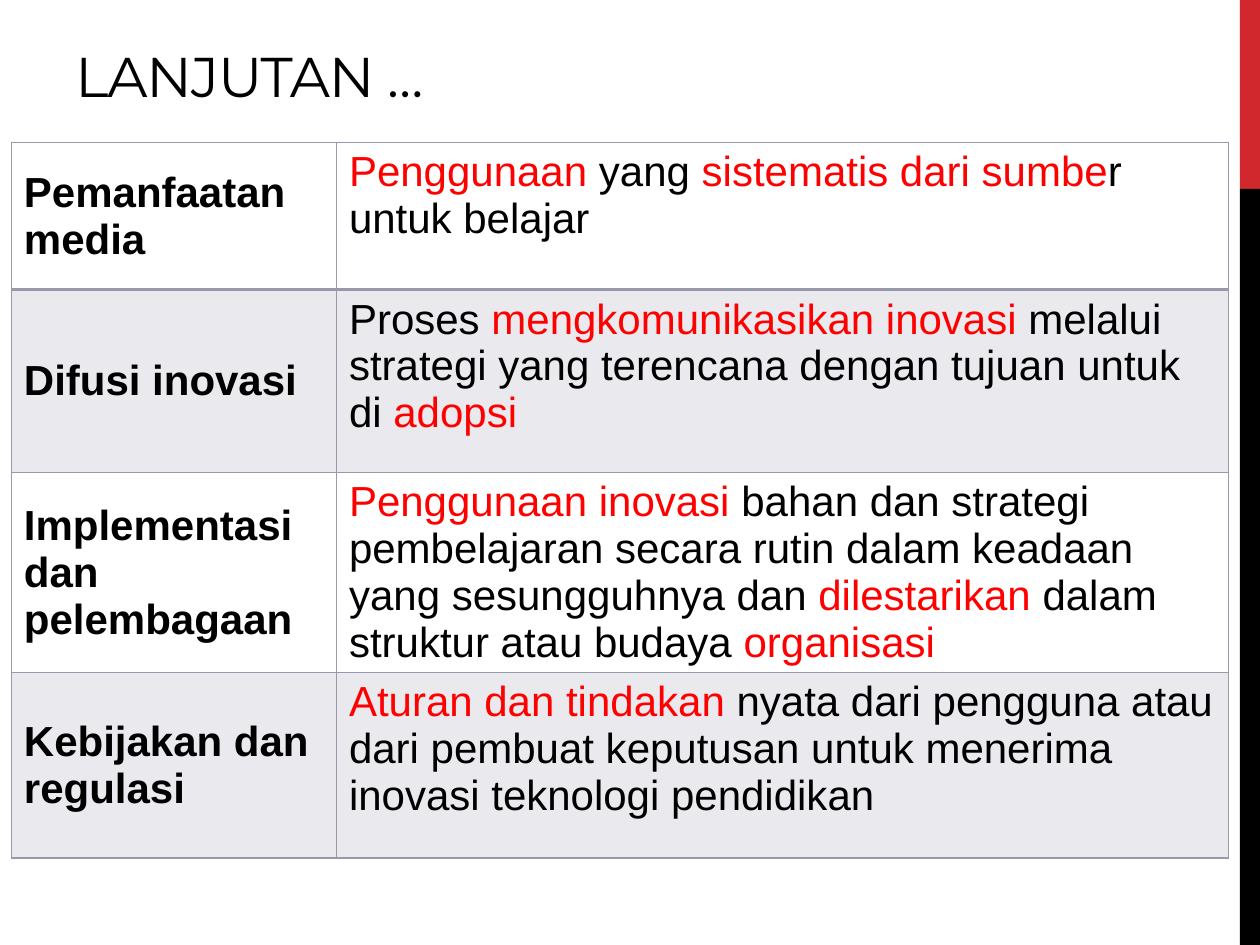
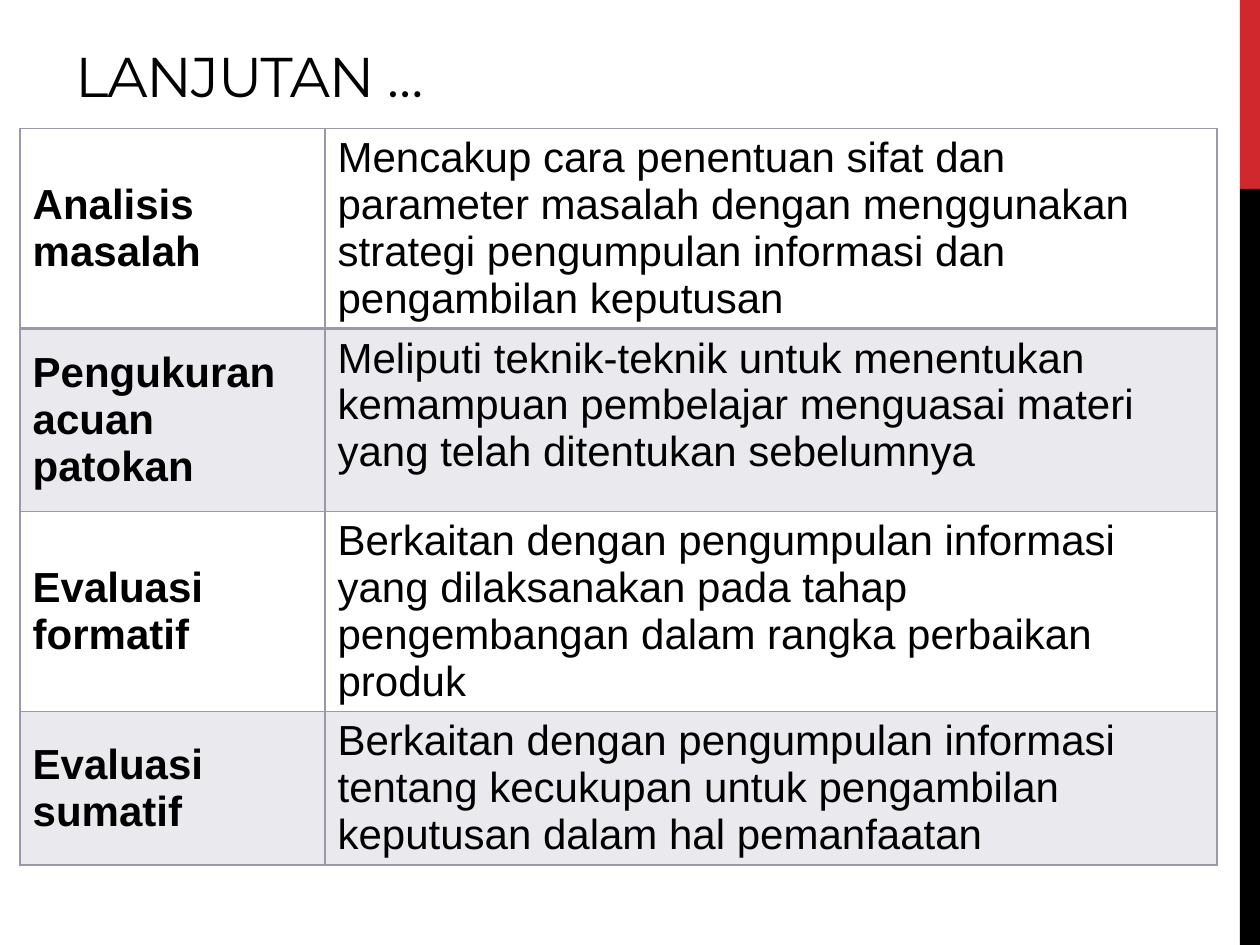
import pptx
import pptx.dml.color
import pptx.enum.shapes
import pptx.enum.text
import pptx.oxml.ns
import pptx.util
from lxml import etree
from pptx.util import Inches

BLACK, RED, ACCENT, GREY = "000000", "FF0000", "D1282E", "989AAC"
TITLE_FONT, BODY_FONT = "Montserrat", "Arial"
BODY_SIZE, BODY_LINE = 24, 26.8
BAND_OPACITY = 20

MEDIA_ROWS = [
    ("Pemanfaatan media", "*Penggunaan* yang *sistematis dari sumbe*r untuk belajar"),
    ("Difusi inovasi",
     "Proses *mengkomunikasikan inovasi *melalui strategi yang terencana "
     "dengan tujuan untuk di *adopsi*"),
    ("Implementasi dan pelembagaan",
     "*Penggunaan inovasi *bahan dan strategi pembelajaran secara rutin dalam keadaan "
     "yang sesungguhnya dan *dilestarikan *dalam struktur atau budaya *organisasi*"),
    ("Kebijakan dan regulasi",
     "*Aturan dan tindakan *nyata dari pengguna atau dari pembuat keputusan "
     "untuk menerima inovasi teknologi pendidikan"),
]
EVALUATION_ROWS = [
    ("Analisis masalah",
     "Mencakup cara penentuan sifat dan parameter masalah dengan menggunakan "
     "strategi pengumpulan informasi dan pengambilan keputusan"),
    ("Pengukuran acuan patokan",
     "Meliputi teknik-teknik untuk menentukan kemampuan pembelajar menguasai materi "
     "yang telah ditentukan sebelumnya"),
    ("Evaluasi formatif",
     "Berkaitan dengan pengumpulan informasi yang dilaksanakan pada tahap "
     "pengembangan dalam rangka perbaikan produk"),
    ("Evaluasi sumatif",
     "Berkaitan dengan pengumpulan informasi tentang kecukupan untuk pengambilan "
     "keputusan dalam hal pemanfaatan"),
]


def color(value):
    return pptx.dml.color.RGBColor.from_string(value)


def add_element(parent, tag, **attributes):
    return etree.SubElement(parent, pptx.oxml.ns.qn(tag), **attributes)


class SlideBuilder:
    def __init__(self, deck):
        self.deck = deck
        self.page = None

    def new_page(self, title):
        self.page = self.deck.slides.add_slide(self.deck.slide_layouts[6])
        self.band(0, 1.5, ACCENT)
        self.band(1.5, 6, BLACK)
        self.title(title)

    def band(self, top, height, fill):
        band = self.page.shapes.add_shape(
            pptx.enum.shapes.MSO_SHAPE.RECTANGLE,
            Inches(9.84), Inches(top), Inches(0.16), Inches(height))
        band.shadow.inherit = False
        band.fill.solid()
        band.fill.fore_color.rgb = color(fill)
        band.line.fill.background()

    def title(self, text):
        box = self.page.shapes.add_textbox(
            Inches(0.5), Inches(0.16), Inches(6.33), Inches(0.75))
        box.text_frame.word_wrap = True
        box.text_frame.vertical_anchor = pptx.enum.text.MSO_ANCHOR.BOTTOM
        para = box.text_frame.paragraphs[0]
        span = para.add_run()
        span.text = text
        self.style(para.font, TITLE_FONT, 32)
        span.font._element.set("spc", "-60")

    def style(self, font, name, size, bold=False, fill=BLACK):
        font.name = name
        font.size = pptx.util.Pt(size)
        font.bold = bold
        font.color.rgb = color(fill)

    def table(self, left, top, widths, heights, rows):
        frame = self.page.shapes.add_table(
            len(rows), len(widths), Inches(left), Inches(top),
            Inches(sum(widths)), Inches(sum(heights)))
        table = frame.table
        table.first_row = table.horz_banding = False
        for column, width in zip(table.columns, widths):
            column.width = Inches(width)
        for index, (height, texts) in enumerate(zip(heights, rows)):
            table.rows[index].height = Inches(height)
            for column, text in enumerate(texts):
                cell = table.cell(index, column)
                self.cell_text(cell, text, is_term=column == 0)
                self.cell_borders(cell, index)
                self.cell_fill(cell, banded=index % 2 == 1)

    def cell_text(self, cell, text, is_term):
        anchors = pptx.enum.text.MSO_ANCHOR
        cell.vertical_anchor = anchors.MIDDLE if is_term else anchors.TOP
        para = cell.text_frame.paragraphs[0]
        para.line_spacing = pptx.util.Pt(BODY_LINE)
        # Asterisks enclose the highlighted words
        for position, piece in enumerate(text.split("*")):
            if piece:
                span = para.add_run()
                span.text = piece
                fill = RED if position % 2 else BLACK
                self.style(span.font, BODY_FONT, BODY_SIZE, is_term, fill)

    def cell_borders(self, cell, row):
        # The rule below the first row is heavier
        weights = {"L": 1, "R": 1, "T": 2 if row == 1 else 1, "B": 2 if row == 0 else 1}
        properties = cell._tc.get_or_add_tcPr()
        for side, weight in weights.items():
            line = add_element(properties, f"a:ln{side}", w=str(pptx.util.Pt(weight)))
            add_element(add_element(line, "a:solidFill"), "a:srgbClr", val=GREY)

    def cell_fill(self, cell, banded):
        if not banded:
            cell.fill.background()
            return
        cell.fill.solid()
        cell.fill.fore_color.rgb = color(GREY)
        tint = cell._tc.tcPr.find(
            f"{pptx.oxml.ns.qn('a:solidFill')}/{pptx.oxml.ns.qn('a:srgbClr')}")
        add_element(tint, "a:alpha", val=str(BAND_OPACITY * 1000))


def main():
    deck = pptx.Presentation()
    deck.slide_width, deck.slide_height = Inches(10), Inches(7.5)
    builder = SlideBuilder(deck)

    # Media use, diffusion, implementation and policy
    builder.new_page("LANJUTAN …")
    builder.table(0.09, 1.13, [2.58, 7.08], [1.17, 1.45, 1.47, 1.47], MEDIA_ROWS)

    # Problem analysis, measurement and evaluation
    builder.new_page("LANJUTAN …")
    builder.table(0.16, 1.02, [2.42, 7.08], [1.17, 1.45, 1.47, 1.09], EVALUATION_ROWS)

    deck.save("out.pptx")


if __name__ == "__main__":
    main()
